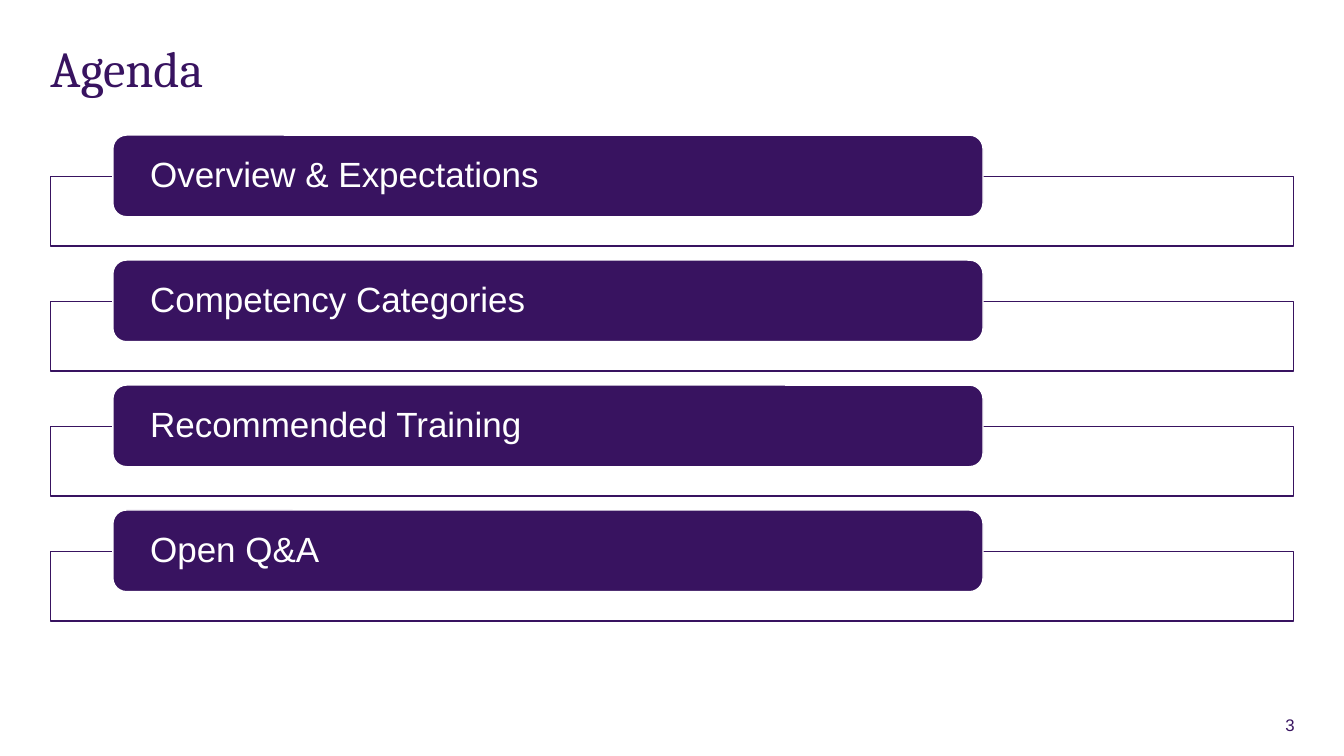
from pptx import Presentation
from pptx.dml.color import RGBColor as RGB
from pptx.enum.shapes import MSO_SHAPE as Shape
from pptx.enum.text import MSO_ANCHOR as Anchor, PP_ALIGN as Align
from pptx.util import Inches, Pt

COLORS = {"purple": "381360", "white": "FFFFFF"}
TOPICS = [
    "Overview & Expectations",
    "Competency Categories",
    "Recommended Training",
    "Open Q&A",
]
LEFT, WIDTH = 0.5, 12.33
TOP, STEP = 1.34, 1.24


class Deck:
    """Holds the style and the current slide, and draws its elements."""

    def __init__(self):
        self.show = Presentation()
        self.show.slide_width = Inches(13.33)
        self.show.slide_height = Inches(7.5)
        self.slide = self.show.slides.add_slide(self.show.slide_layouts[6])

    def color(self, name):
        return RGB.from_string(COLORS[name])

    def letter(self, shape, text, size, color, font="Arial", inset=0,
               align=Align.LEFT, anchor=Anchor.TOP, space=0.9, wrap=True):
        frame = shape.text_frame
        frame.word_wrap = wrap
        frame.vertical_anchor = anchor
        frame.margin_left = frame.margin_right = Inches(inset)
        frame.margin_top = frame.margin_bottom = 0
        para = frame.paragraphs[0]
        para.text = text
        para.alignment = align
        para.line_spacing = space
        para.font.name = font
        para.font.size = Pt(size)
        para.font.color.rgb = self.color(color)

    def label(self, box, text, size, **style):
        shape = self.slide.shapes.add_textbox(*map(Inches, box))
        self.letter(shape, text, size, "purple", **style)

    def panel(self, kind, box, fill, line):
        shape = self.slide.shapes.add_shape(kind, *map(Inches, box))
        shape.shadow.inherit = False
        shape.fill.solid()
        shape.fill.fore_color.rgb = self.color(fill)
        shape.line.color.rgb = self.color(line)
        shape.line.width = Pt(1)
        return shape

    def topic(self, top, text):
        self.panel(Shape.RECTANGLE, (LEFT, top + 0.41, WIDTH, 0.69),
                   "white", "purple")
        bar = self.panel(Shape.ROUNDED_RECTANGLE, (1.12, top, 8.63, 0.81),
                         "purple", "white")
        self.letter(bar, text, 25, "white", inset=0.33, anchor=Anchor.MIDDLE)


def main():
    deck = Deck()
    deck.label((LEFT, 0.44, WIDTH, 1.15), "Agenda", 36, font="Cambria")
    for row, text in enumerate(TOPICS):
        deck.topic(TOP + row * STEP, text)
    deck.label((12.63, 7.09, 0.21, 0.2), "3", 12, align=Align.RIGHT,
               space=1.0, wrap=False)
    deck.show.save("out.pptx")


if __name__ == "__main__":
    main()
